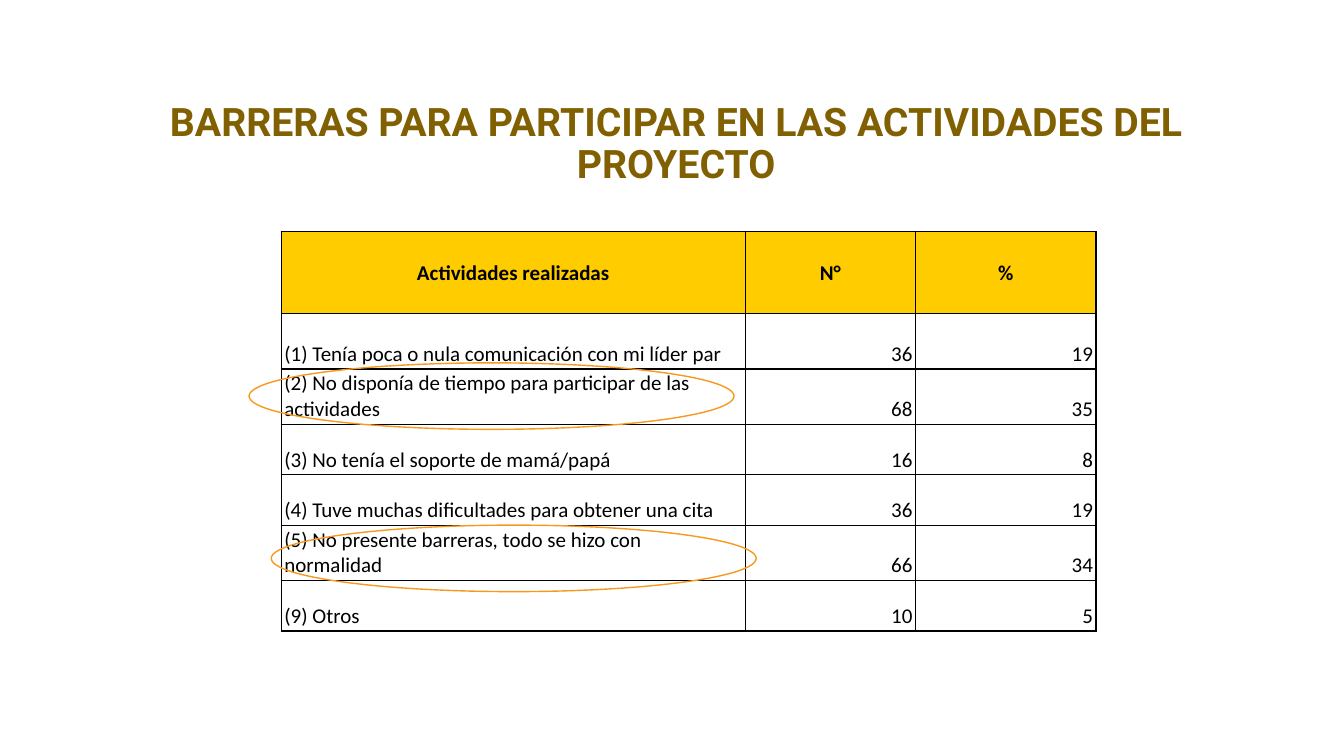
from lxml import etree
from pptx import Presentation
from pptx.dml.color import RGBColor
from pptx.enum.shapes import MSO_SHAPE
from pptx.enum.text import MSO_ANCHOR, MSO_AUTO_SIZE, PP_ALIGN
from pptx.oxml.ns import qn
from pptx.util import Inches, Pt

ELLIPSE = MSO_SHAPE.OVAL
MIDDLE, BOTTOM = MSO_ANCHOR.MIDDLE, MSO_ANCHOR.BOTTOM
LEFT, CENTER, RIGHT = PP_ALIGN.LEFT, PP_ALIGN.CENTER, PP_ALIGN.RIGHT
NO_AUTOFIT = MSO_AUTO_SIZE.NONE

COLORS = {"title": "806000", "header": "FFCC00", "text": "000000",
          "border": "000000", "highlight": "F8981C"}
TITLE = "BARRERAS PARA PARTICIPAR EN LAS ACTIVIDADES DEL PROYECTO"
ROWS = [
    ("Actividades realizadas", "N°", "%"),
    ("(1) Tenía poca o nula comunicación con mi líder par", "36", "19"),
    ("(2) No disponía de tiempo para participar de las actividades", "68", "35"),
    ("(3) No tenía el soporte de mamá/papá", "16", "8"),
    ("(4) Tuve muchas dificultades para obtener una cita", "36", "19"),
    ("(5) No presente barreras, todo se hizo con normalidad", "66", "34"),
    ("(9) Otros", "10", "5"),
]
COLUMN_WIDTHS = [4.6, 1.69, 1.79]
ROW_HEIGHTS = [0.81, 0.55, 0.55, 0.5, 0.5, 0.5, 0.5]
HEADER_MARGINS = {"margin_left": 0.01, "margin_top": 0.01,
                  "margin_right": 0.01, "margin_bottom": 0}
BODY_MARGINS = {"margin_left": 0.03, "margin_top": 0.02,
                "margin_right": 0.03, "margin_bottom": 0.02}
HIGHLIGHTS = [(2.47, 3.6), (2.69, 5.21)]


def write_text(frame, text, alignment, color, **font_format):
    paragraph = frame.paragraphs[0]
    paragraph.alignment = alignment
    span = paragraph.add_run()
    span.text = text
    span.font.color.rgb = RGBColor.from_string(COLORS[color])
    for name, value in font_format.items():
        setattr(span.font, name, value)
    return paragraph


def add_borders(cell):
    properties = cell._tc.get_or_add_tcPr()
    for side in ("a:lnL", "a:lnR", "a:lnT", "a:lnB"):
        border = etree.SubElement(properties, qn(side), w=str(Pt(1)))
        fill = etree.SubElement(border, qn("a:solidFill"))
        etree.SubElement(fill, qn("a:srgbClr"), val=COLORS["border"])


deck = Presentation()
deck.slide_width = Inches(13.33)
deck.slide_height = Inches(7.5)
page = deck.slides.add_slide(deck.slide_layouts[5])

table = page.shapes.add_table(
    len(ROWS), len(COLUMN_WIDTHS), Inches(2.79), Inches(2.3),
    Inches(sum(COLUMN_WIDTHS)), Inches(sum(ROW_HEIGHTS))).table
table.first_row = False
table.horz_banding = False
for column, width in zip(table.columns, COLUMN_WIDTHS):
    column.width = Inches(width)
for row, height in zip(table.rows, ROW_HEIGHTS):
    row.height = Inches(height)

for row_index, values in enumerate(ROWS):
    is_header = row_index == 0
    margins = HEADER_MARGINS if is_header else BODY_MARGINS
    for column_index, value in enumerate(values):
        cell = table.cell(row_index, column_index)
        add_borders(cell)
        if is_header:
            cell.fill.solid()
            cell.fill.fore_color.rgb = RGBColor.from_string(COLORS["header"])
            alignment = CENTER
        else:
            cell.fill.background()
            alignment = LEFT if column_index == 0 else RIGHT
        cell.vertical_anchor = MIDDLE if is_header else BOTTOM
        for name, margin in margins.items():
            setattr(cell, name, Inches(margin))
        write_text(cell.text_frame, value, alignment, "text",
                   name="Calibri", size=Pt(15), bold=is_header)

title = page.shapes.title
title.left, title.top = Inches(1.23), Inches(0.77)
title.width, title.height = Inches(10.95), Inches(1.33)
frame = title.text_frame
frame.word_wrap = True
frame.auto_size = NO_AUTOFIT
frame.vertical_anchor = MIDDLE
heading = write_text(frame, TITLE, CENTER, "title",
                     name="Roboto", size=Pt(28), bold=True)
heading.line_spacing = 0.9
heading.space_before = Pt(0)

for left, top in HIGHLIGHTS:
    highlight = page.shapes.add_shape(
        ELLIPSE, Inches(left), Inches(top), Inches(4.81), Inches(0.66))
    highlight.shadow.inherit = False
    highlight.fill.background()
    highlight.line.color.rgb = RGBColor.from_string(COLORS["highlight"])
    highlight.line.width = Pt(1)

deck.save("out.pptx")
